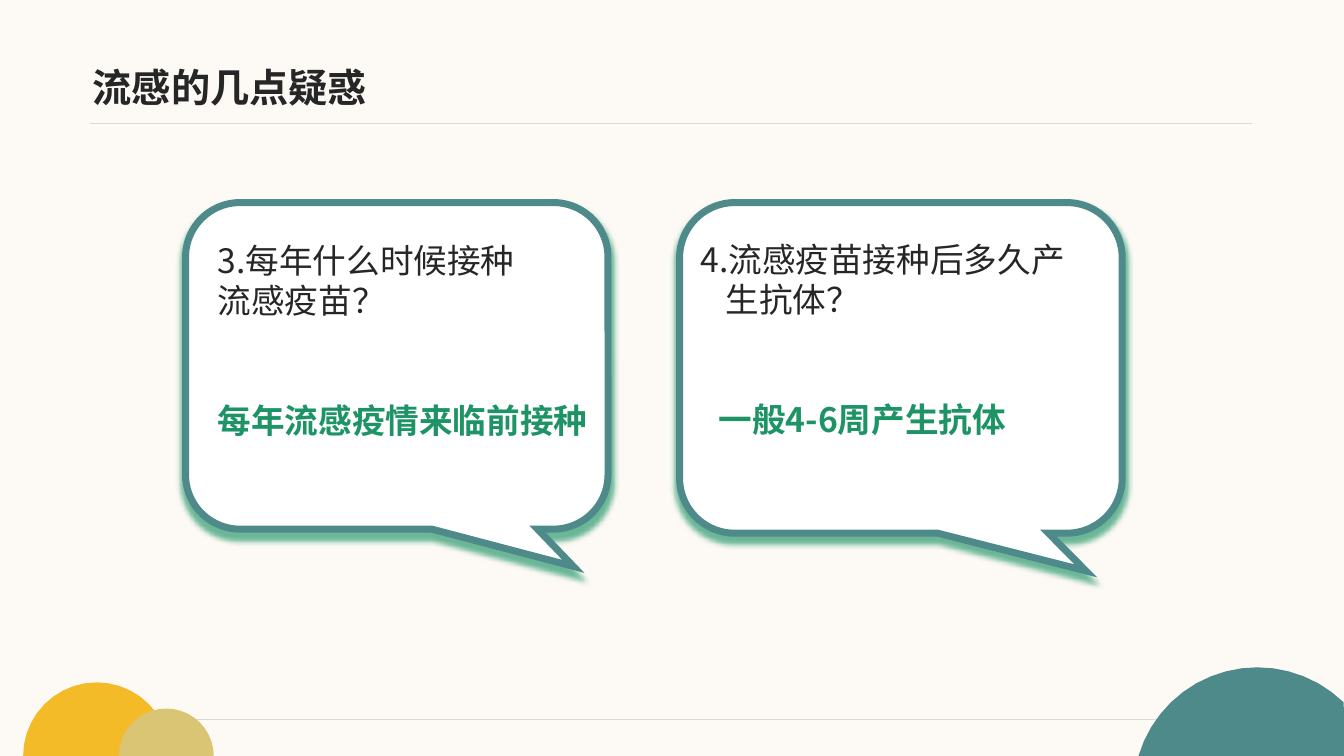
"""Builds the flu questions slide with two speech bubbles."""
from math import asin, cos, pi, sin

from lxml.etree import SubElement
from pptx import Presentation
from pptx.dml.color import RGBColor
from pptx.enum.shapes import MSO_CONNECTOR as Connector, MSO_SHAPE as Shape
from pptx.enum.text import MSO_ANCHOR as Anchor
from pptx.oxml.ns import qn
from pptx.util import Inches, Pt

CREAM = RGBColor(0xFD, 0xFA, 0xF5)
WHITE = RGBColor(0xFF, 0xFF, 0xFF)
GREY = RGBColor(0xD9, 0xD9, 0xD9)
INK = RGBColor(0x26, 0x26, 0x26)
TEAL = RGBColor(0x4F, 0x8A, 0x8B)
GREEN = RGBColor(0x1E, 0x94, 0x66)
YELLOW = RGBColor(0xF3, 0xBB, 0x28)
SAND = RGBColor(0xD9, 0xC5, 0x73)
CJK_FONT = "Noto Sans CJK SC"
WIDTH, HEIGHT = 13.33, 7.5
LINE_PITCH = 28.6
ARC_STEPS = 20


def format_text(paragraph, latin, size, color, bold):
    for run in paragraph.runs:
        run.font.name = latin
        run.font.size = Pt(size)
        run.font.bold = bold
        run.font.color.rgb = color
        east_asian = SubElement(run.font._element, qn("a:ea"))
        east_asian.set("typeface", CJK_FONT)


def add_text_box(left, top, width, height):
    frame = slide.shapes.add_textbox(
        Inches(left), Inches(top), Inches(width), Inches(height)).text_frame
    frame.word_wrap = True
    return frame


presentation = Presentation()
presentation.slide_width = Inches(WIDTH)
presentation.slide_height = Inches(HEIGHT)
slide = presentation.slides.add_slide(presentation.slide_layouts[6])
slide.background.fill.solid()
slide.background.fill.fore_color.rgb = CREAM

for start, end, level in [(0.89, 12.42, 1.22), (1.69, 11.55, 7.14)]:
    rule = slide.shapes.add_connector(
        Connector.STRAIGHT, Inches(start), Inches(level), Inches(end), Inches(level))
    rule.line.color.rgb = GREY
    rule.line.width = Pt(0.5)
    SubElement(rule._element.spPr, qn("a:effectLst"))

for center_x, center_y, radius, color in [
        (0.96, 7.5, 0.73, YELLOW), (1.65, 7.5, 0.47, SAND), (12.47, 7.85, 1.23, TEAL)]:
    first = asin((center_y - HEIGHT) / radius)
    angles = [first + (pi - 2 * first) * step / ARC_STEPS for step in range(ARC_STEPS + 1)]
    points = [(Inches(min(center_x + radius * cos(angle), WIDTH)),
               Inches(center_y - radius * sin(angle))) for angle in angles]
    builder = slide.shapes.build_freeform(*points[0])
    builder.add_line_segments(points[1:])
    circle = builder.convert_to_shape()
    circle.shadow.inherit = False
    circle.fill.solid()
    circle.fill.fore_color.rgb = color
    circle.line.fill.background()

title = add_text_box(0.92, 0.39, 11.5, 0.94)
title.margin_left = title.margin_right = title.margin_top = title.margin_bottom = 0
title.vertical_anchor = Anchor.MIDDLE
title.text = "流感的几点疑惑"
format_text(title.paragraphs[0], "Arial", 28, INK, True)

for left, width, height in [(1.84, 4.19, 3.24), (6.74, 4.39, 3.28)]:
    bubble = slide.shapes.add_shape(
        Shape.ROUNDED_RECTANGULAR_CALLOUT,
        Inches(left), Inches(2.01), Inches(width), Inches(height))
    for index, value in enumerate([0.418, 0.614, 0.167]):
        bubble.adjustments[index] = value
    bubble.fill.solid()
    bubble.fill.fore_color.rgb = WHITE
    bubble.line.color.rgb = TEAL
    bubble.line.width = Pt(5)
    SubElement(bubble.line._ln, qn("a:miter"), lim="800000")
    bubble.shadow.inherit = False
    effects = bubble._element.spPr.find(qn("a:effectLst"))
    shadow = SubElement(effects, qn("a:outerShdw"), blurRad=str(Pt(4)), dist=str(Pt(3)),
                        dir="5400000", sx="101000", sy="101000", algn="t",
                        rotWithShape="0")
    shade = SubElement(shadow, qn("a:srgbClr"), val=str(GREEN))
    SubElement(shade, qn("a:alpha"), val="66000")

for left, top, width, height, lines in [
        (2.06, 2.33, 3.95, 2.3,
         [("3.每年什么时候接种", 0), ("流感疫苗？", 0), ("每年流感疫情来临前接种", 0)]),
        (6.8, 2.32, 4.33, 2.44,
         [("4.流感疫苗接种后多久产", 0.05), ("生抗体？", 0.3), ("一般4-6周产生抗体", 0.23)])]:
    frame = add_text_box(left, top, width, height)
    frame.margin_right = 0
    frame.text = "\n".join(text for text, indent in lines)
    for paragraph, (text, indent) in zip(frame.paragraphs, lines):
        is_answer = text == lines[-1][0]
        paragraph.line_spacing = Pt(LINE_PITCH)
        if is_answer:
            paragraph.space_before = Pt(2 * LINE_PITCH)
        properties = paragraph._p.get_or_add_pPr()
        properties.set("marL", str(Inches(indent)))
        properties.set("indent", "0")
        format_text(paragraph, CJK_FONT, 24, GREEN if is_answer else INK, is_answer)

presentation.save("out.pptx")
